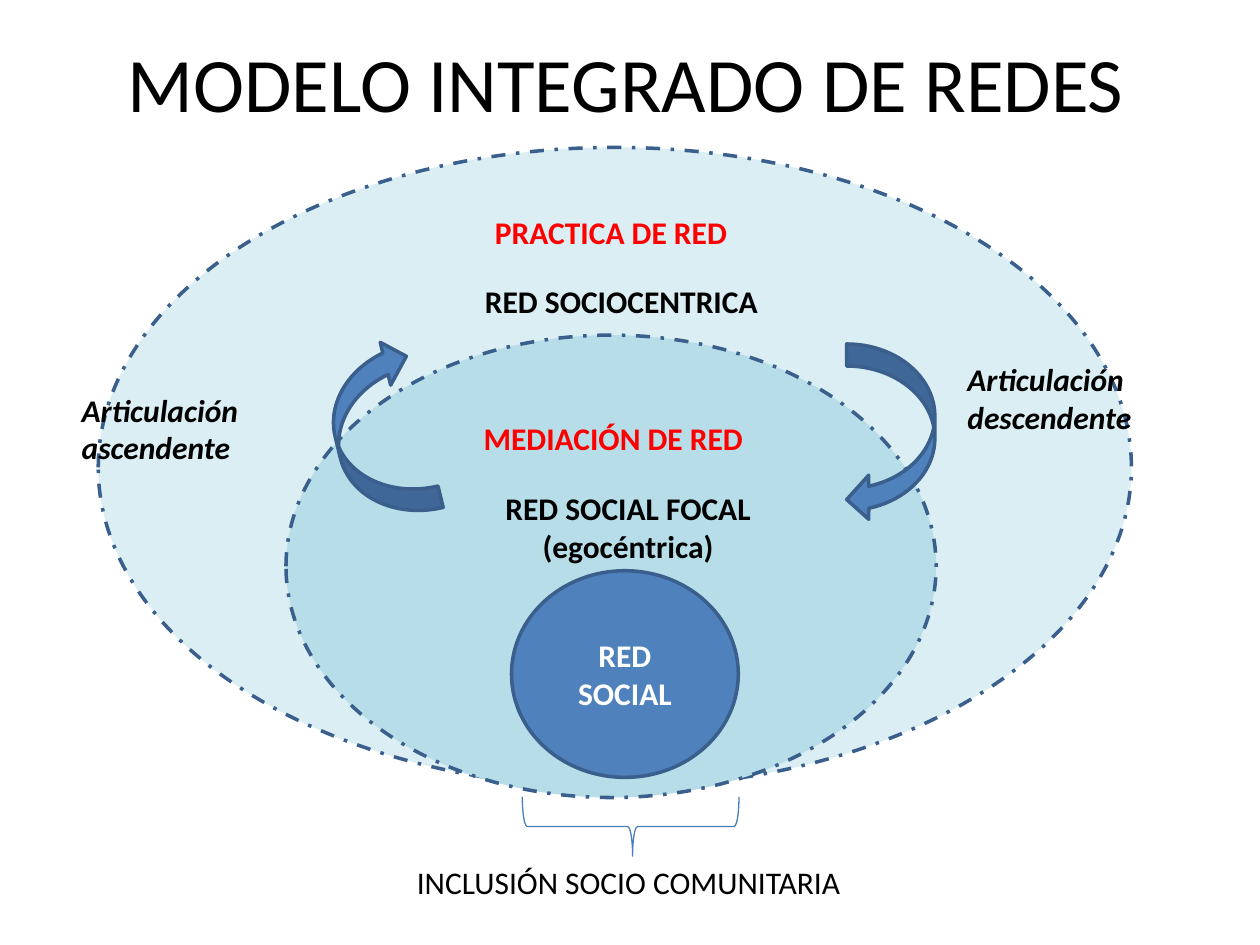
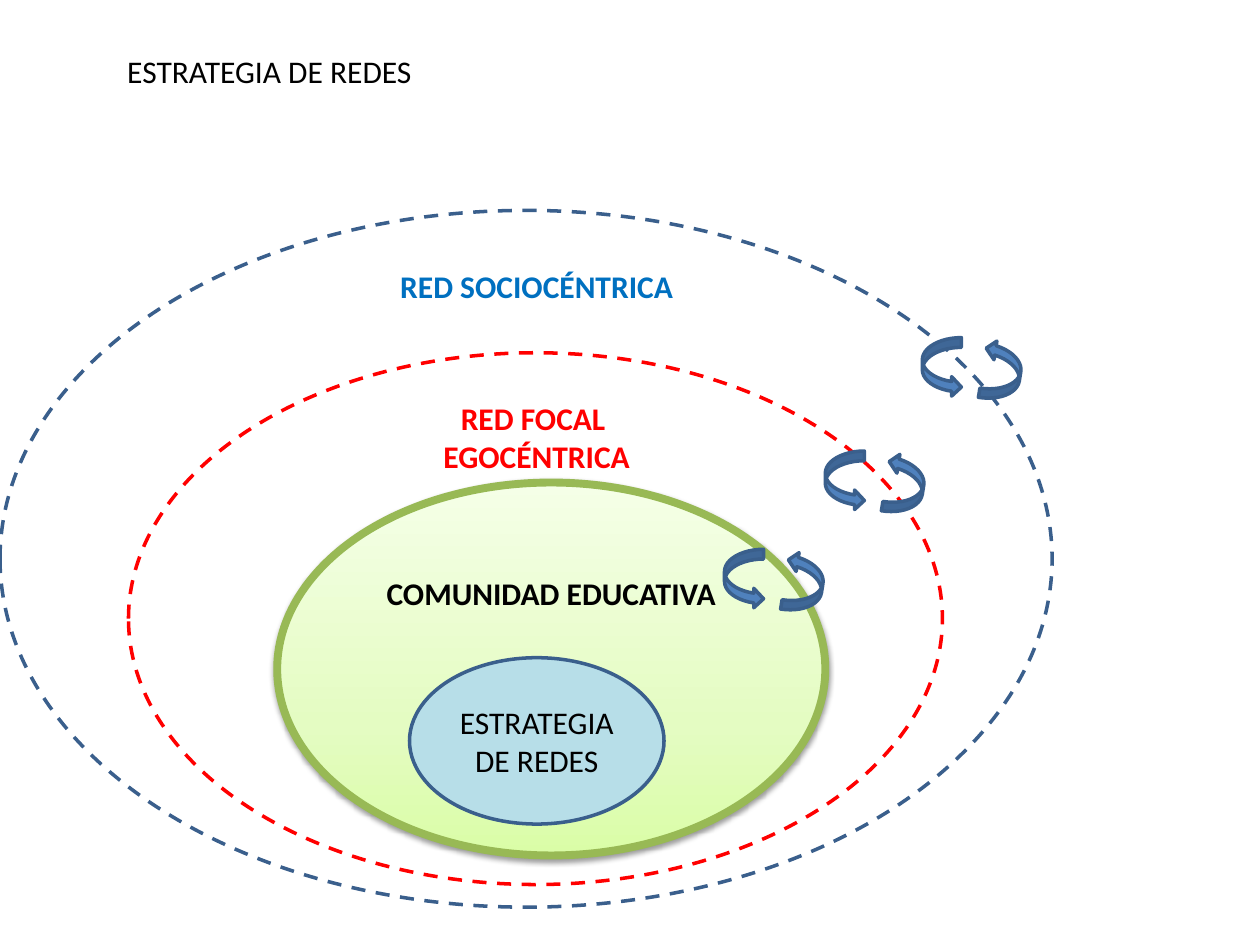
from copy import deepcopy
from pptx import Presentation
from pptx.dml.color import RGBColor
from pptx.enum import dml, shapes, text
from pptx.oxml import parse_xml
from pptx.oxml.ns import nsdecls, qn
from pptx.util import Inches, Pt

# Shared look
FONT = "Calibri"
BLACK = RGBColor(0x00, 0x00, 0x00)
WHITE = RGBColor(0xFF, 0xFF, 0xFF)
RED = RGBColor(0xFF, 0x00, 0x00)
AZURE = RGBColor(0x00, 0x70, 0xC0)
BLUE = RGBColor(0x4F, 0x81, 0xBD)
NAVY = RGBColor(0x3A, 0x5F, 0x8C)
BRACE = RGBColor(0x4B, 0x7E, 0xBC)
PALE = RGBColor(0xDB, 0xEE, 0xF4)
AQUA = RGBColor(0xB7, 0xDE, 0xE8)
OLIVE = RGBColor(0x98, 0xB9, 0x55)
GREENS = [(0, RGBColor(0xDA, 0xFD, 0xA7)), (0.35, RGBColor(0xE4, 0xFC, 0xC2)),
          (1, RGBColor(0xF5, 0xFF, 0xE7))]
KIND = shapes.MSO_SHAPE
DASH = dml.MSO_LINE
LEFT, MID = text.PP_ALIGN.LEFT, text.PP_ALIGN.CENTER
TOP, CORE = text.MSO_ANCHOR.TOP, text.MSO_ANCHOR.MIDDLE


def write(shape, lines, color=BLACK, size=18, bold=False, italic=False,
          align=MID, anchor=TOP, wrap=True):
    frame = shape.text_frame
    frame.auto_size = text.MSO_AUTO_SIZE.NONE
    frame.word_wrap = wrap
    frame.vertical_anchor = anchor
    for i, line in enumerate(lines.split("\n")):
        para = frame.add_paragraph() if i else frame.paragraphs[0]
        para.alignment = align
        run = para.add_run()
        run.text = line
        font = run.font
        font.name, font.size = FONT, Pt(size)
        font.bold, font.italic = bold, italic
        font.color.rgb = color


def draw(home, kind, box, fill=None, line=NAVY, width=2, dash=None, turn=0):
    shape = home.add_shape(kind, *map(Inches, box))
    shape.shadow.inherit = False
    shape.rotation = turn
    if fill is None:
        shape.fill.background()
    else:
        shape.fill.solid()
        shape.fill.fore_color.rgb = fill
    shape.line.color.rgb = line
    shape.line.width = Pt(width)
    if dash:
        shape.line.dash_style = dash
    return shape


deck = Presentation()
deck.slide_width, deck.slide_height = Inches(10), Inches(7.5)

# Both slides with their titles
pages = []
for name, box, size, align, wrap in [
        ("MODELO INTEGRADO DE REDES", (0.47, 0.23, 9, 0.7), 44, MID, True),
        ("ESTRATEGIA DE REDES", (0.91, 0.36, 2.48, 0.4), 18, LEFT, False)]:
    page = deck.slides.add_slide(deck.slide_layouts[5])
    title = page.shapes.title
    title.left, title.top, title.width, title.height = map(Inches, box)
    write(title, name, size=size, align=align, wrap=wrap)
    pages.append(page.shapes)
model, plan = pages

# Slide 1: nested networks
for box, fill in [((0.78, 1.17, 8.2, 5.08), PALE), ((2.27, 2.66, 5.16, 3.67), AQUA)]:
    draw(model, KIND.OVAL, box, fill, dash=DASH.DASH_DOT)
core = draw(model, KIND.OVAL, (4.06, 4.53, 1.8, 1.64), BLUE)
write(core, "RED SOCIAL", WHITE, bold=True, anchor=CORE)

# Brace and arrows
brace = draw(model, KIND.RIGHT_BRACE, (4.77, 5.7, 0.47, 1.72), line=BRACE,
             width=0.75, turn=90)
brace.adjustments[0], brace.adjustments[1] = 0.083, 0.491
for x, y, turn in [(6.72, 2.73, 0), (2.66, 2.72, 166.3)]:
    draw(model, KIND.CURVED_LEFT_ARROW, (x, y, 0.7, 1.41), BLUE, turn=turn)

# Labels of both slides
for home, box, words, color, bold, italic, align in [
        (model, (3.82, 3.83, 2.33, 0.71), "RED SOCIAL FOCAL (egocéntrica)", BLACK, True, False, MID),
        (model, (3.75, 2.19, 2.42, 0.4), "RED SOCIOCENTRICA", BLACK, True, False, LEFT),
        (model, (2.52, 6.8, 4.94, 0.4), "INCLUSIÓN SOCIO COMUNITARIA", BLACK, False, False, MID),
        (model, (3.83, 1.64, 2.33, 0.4), "PRACTICA DE RED", RED, True, False, LEFT),
        (model, (3.74, 3.28, 2.37, 0.4), "MEDIACIÓN DE RED", RED, True, False, LEFT),
        (model, (7.58, 2.81, 2.03, 0.71), "Articulación descendente", BLACK, True, True, LEFT),
        (model, (0.55, 3.05, 2.03, 0.71), "Articulación ascendente", BLACK, True, True, LEFT),
        (plan, (1.76, 3.12, 5, 0.71), "RED FOCAL \nEGOCÉNTRICA", RED, True, False, MID),
        (plan, (1.76, 2.07, 5, 0.4), "RED SOCIOCÉNTRICA", AZURE, True, False, MID)]:
    label = home.add_textbox(*map(Inches, box))
    write(label, words, color, bold=bold, italic=italic, align=align)

# Slide 2: school community with gradient and shadow
school = draw(plan, KIND.OVAL, (2.2, 3.83, 4.35, 2.96), line=OLIVE, width=4.5)
school.fill.gradient()
school.fill.gradient_angle = 90
props = school._element.spPr
last = props.find(".//" + qn("a:gsLst"))[-1]
last.addprevious(deepcopy(last))
for stop, (place, color) in zip(school.fill.gradient_stops, GREENS):
    stop.position = place
    stop.color.rgb = color
props.find(qn("a:effectLst")).append(parse_xml(
    f'<a:outerShdw {nsdecls("a")} blurRad="40000" dist="20000" dir="5400000" rotWithShape="0">'
    '<a:srgbClr val="000000"><a:alpha val="38000"/></a:srgbClr></a:outerShdw>'))
write(school, "COMUNIDAD EDUCATIVA", bold=True, anchor=CORE)
school.text_frame.margin_bottom = Inches(1.25)

# Dashed rings and inner strategy
for box, line in [((1.02, 2.8, 6.46, 4.22), RED), ((0, 1.67, 8.35, 5.53), NAVY)]:
    draw(plan, KIND.OVAL, box, line=line, dash=DASH.DASH)
inner = draw(plan, KIND.OVAL, (3.25, 5.22, 2.02, 1.32), AQUA)
write(inner, "ESTRATEGIA DE REDES", anchor=CORE)

# Cycle arrows on each ring
for x, y in [(5.75, 4.36), (6.55, 3.58), (7.32, 2.68)]:
    cycle = plan.add_group_shape().shapes
    draw(cycle, KIND.CURVED_RIGHT_ARROW, (x, y, 0.31, 0.47), BLUE)
    back = draw(cycle, KIND.CURVED_LEFT_ARROW, (x + 0.48, y + 0.03, 0.3, 0.47),
                BLUE, turn=189)
    back._element.spPr.xfrm.set("flipH", "1")

deck.save("out.pptx")
